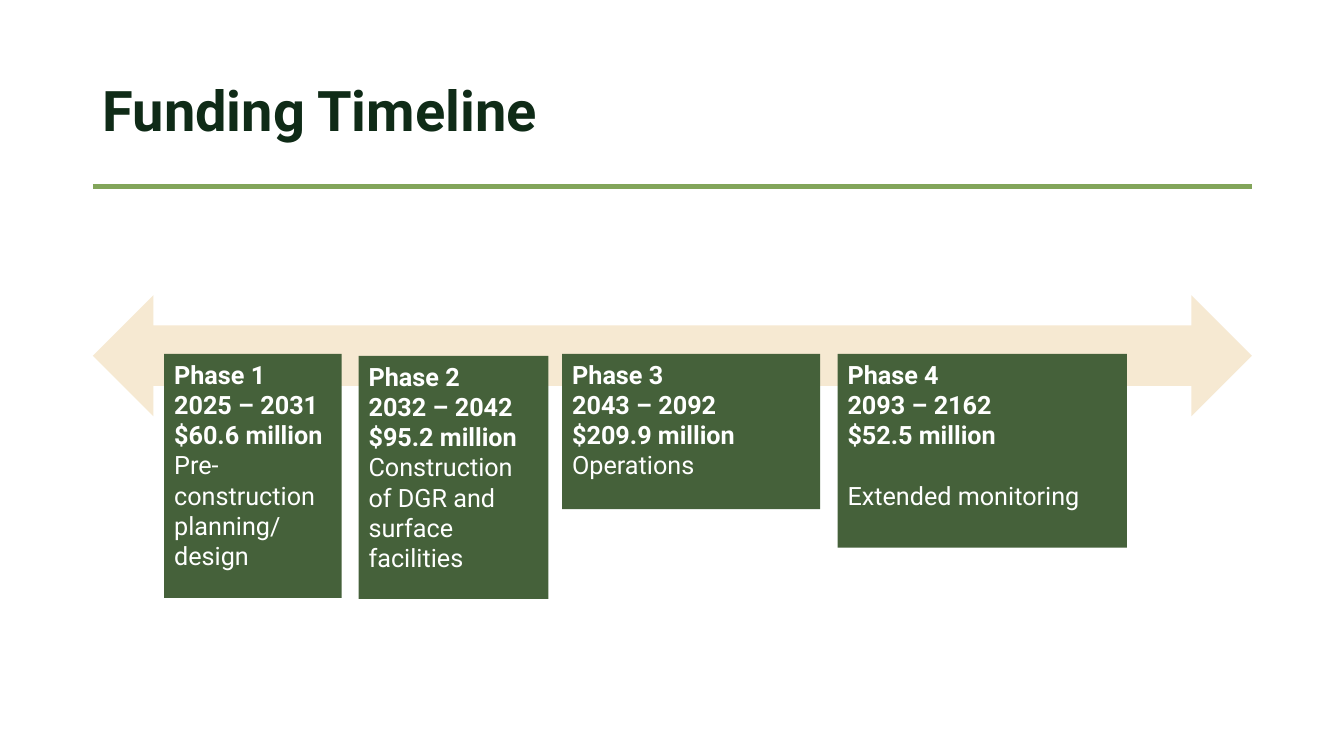
import pptx
import pptx.util
import pptx.dml.color
import pptx.enum.shapes
import pptx.enum.text
import pptx.oxml.ns
import lxml.etree

Cm, Pt = pptx.util.Cm, pptx.util.Pt
qn = pptx.oxml.ns.qn
SHAPE = pptx.enum.shapes.MSO_SHAPE
ANCHOR = pptx.enum.text.MSO_ANCHOR
COLORS = {"title": "0F2B17", "rule": "82A55A", "arrow": "DCA84E", "phase": "45613A", "text": "FFFFFF"}
LEFT, WIDTH = 2.34, 29.21
PHASES = [
    ((4.14, 8.92, 4.47, 6.15), "2025 – 2031", "$60.6 million", "Pre-construction planning/ design", 0),
    ((9.04, 8.97, 4.78, 6.12), "2032 – 2042", "$95.2 million", "Construction of DGR and surface facilities", 0),
    ((14.17, 8.92, 6.5, 3.91), "2043 – 2092", "$209.9 million", "Operations", 0),
    ((21.11, 8.92, 7.29, 4.88), "2093 – 2162", "$52.5 million", "Extended monitoring", 21.6),
]


class Deck:
    """Draw styled elements on the current slide."""

    def __init__(self, prs, font="Roboto"):
        self.font = font
        self.slide = prs.slides.add_slide(prs.slide_layouts[6])

    def color(self, name):
        return pptx.dml.color.RGBColor.from_string(COLORS[name])

    def style(self, p, size, color, bold):
        for r in p.runs:
            r.font.name = self.font
            r.font.size = Pt(size)
            r.font.bold = bold
            r.font.color.rgb = self.color(color)

    def title(self, text, box):
        tf = self.slide.shapes.add_textbox(*map(Cm, box)).text_frame
        tf.word_wrap = True
        tf.vertical_anchor = ANCHOR.MIDDLE
        tf.text = text
        tf.paragraphs[0].line_spacing = 0.9
        self.style(tf.paragraphs[0], 40, "title", True)

    def rule(self, x1, x2, y):
        line = self.slide.shapes.add_connector(
            pptx.enum.shapes.MSO_CONNECTOR.STRAIGHT, Cm(x1), Cm(y), Cm(x2), Cm(y))
        line.line.color.rgb = self.color("rule")
        line.line.width = Pt(3)
        lxml.etree.SubElement(line._element.spPr, qn("a:effectLst"))

    def shape(self, kind, box, color, opacity=100):
        sp = self.slide.shapes.add_shape(kind, *map(Cm, box))
        sp.shadow.inherit = False
        sp.line.fill.background()
        sp.fill.solid()
        sp.fill.fore_color.rgb = self.color(color)
        if opacity < 100:
            clr = sp._element.spPr.find(".//" + qn("a:srgbClr"))
            lxml.etree.SubElement(clr, qn("a:alpha")).set("val", str(opacity * 1000))
        return sp

    def phase(self, box, heading, details, gap):
        tf = self.shape(SHAPE.RECTANGLE, box, "phase").text_frame
        tf.word_wrap = True
        tf.vertical_anchor = ANCHOR.TOP
        tf.text = "\n".join([*heading, details])
        for i, p in enumerate(tf.paragraphs):
            p.alignment = pptx.enum.text.PP_ALIGN.LEFT
            self.style(p, 18, "text", i < len(heading))
        if gap:
            tf.paragraphs[-1].space_before = Pt(gap)


def main():
    prs = pptx.Presentation()
    prs.slide_width, prs.slide_height = Cm(33.87), Cm(19.05)
    deck = Deck(prs)
    deck.rule(LEFT, LEFT + WIDTH, 4.7)
    deck.title("Funding Timeline", (LEFT, 1.02, WIDTH, 3.68))
    deck.shape(SHAPE.LEFT_RIGHT_ARROW, (LEFT, 7.44, WIDTH, 3.05), "arrow", 25)
    for n, (box, years, cost, details, gap) in enumerate(PHASES, 1):
        deck.phase(box, (f"Phase {n}", years, cost), details, gap)
    prs.save("out.pptx")


if __name__ == "__main__":
    main()
